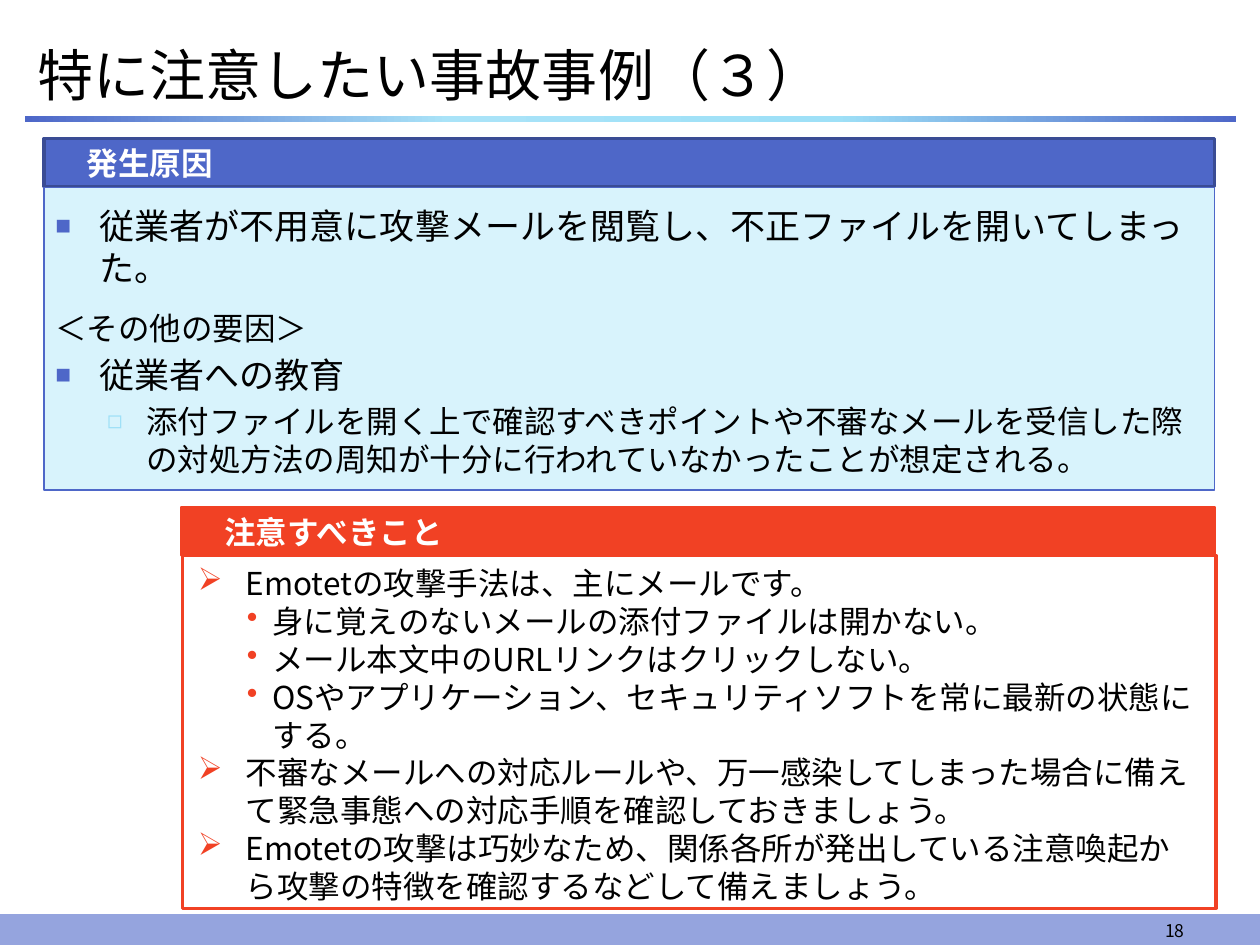
from dataclasses import dataclass

import pptx
import pptx.dml.color
import pptx.enum.shapes
import pptx.enum.text
import pptx.oxml
import pptx.oxml.ns
import pptx.util
from pptx.util import Inches

ALIGN = pptx.enum.text.PP_ALIGN
ANCHOR = pptx.enum.text.MSO_ANCHOR


@dataclass(frozen=True)
class Theme:
    font: str = "Noto Sans CJK JP"
    black: str = "000000"
    white: str = "FFFFFF"
    blue: str = "4E67C8"
    dark_blue: str = "3A4C94"
    footer_blue: str = "95A4DE"
    pale_blue: str = "D8F3FC"
    sky: str = "9EE0F7"
    light_sky: str = "A9E3F8"
    red: str = "F14124"
    title_size: int = 32
    lead_size: int = 20
    text_size: int = 18
    number_size: int = 10
    line_height: float = 1.2


THEME = Theme()

# Paragraph formats: text position and hanging bullet, in inches
CAUSE = dict(size=THEME.lead_size, indent=0.35, hanging=0.35, before=4,
             bullet="■", bullet_color=THEME.blue, bullet_percent=75)
CAUSE_DETAIL = dict(level=1, indent=0.72, hanging=0.31, before=3.6,
                    bullet="◻", bullet_color=THEME.sky, bullet_percent=80)
CAUSE_LABEL = dict(before=12)
ADVICE = dict(indent=0.38, hanging=0.38, bullet="➢", bullet_color=THEME.red)
ADVICE_DETAIL = dict(level=1, indent=0.59, hanging=0.2, bullet="•", bullet_color=THEME.red)

CAUSES = [
    ("従業者が不用意に攻撃メールを閲覧し、不正ファイルを開いてしまった。", CAUSE),
    ("＜その他の要因＞", CAUSE_LABEL),
    ("従業者への教育", CAUSE),
    ("添付ファイルを開く上で確認すべきポイントや不審なメールを受信した際の対処方法の周知が"
     "十分に行われていなかったことが想定される。", CAUSE_DETAIL),
]
ADVICES = [
    ("Emotetの攻撃手法は、主にメールです。", ADVICE),
    ("身に覚えのないメールの添付ファイルは開かない。", ADVICE_DETAIL),
    ("メール本文中のURLリンクはクリックしない。", ADVICE_DETAIL),
    ("OSやアプリケーション、セキュリティソフトを常に最新の状態にする。", ADVICE_DETAIL),
    ("不審なメールへの対応ルールや、万一感染してしまった場合に備えて"
     "緊急事態への対応手順を確認しておきましょう。", ADVICE),
    ("Emotetの攻撃は巧妙なため、関係各所が発出している注意喚起から"
     "攻撃の特徴を確認するなどして備えましょう。", ADVICE),
]


def rgb(color):
    return pptx.dml.color.RGBColor.from_string(color)


def add_child(parent, tag, **attributes):
    child = pptx.oxml.parse_xml(f"<a:{tag} {pptx.oxml.ns.nsdecls('a')}/>")
    for name, value in attributes.items():
        child.set(name, str(value))
    parent.append(child)
    return child


def set_bullet(paragraph, indent, hanging, bullet, color, percent):
    properties = paragraph._p.get_or_add_pPr()
    properties.set("marL", str(Inches(indent)))
    properties.set("indent", str(-Inches(hanging)))
    if not bullet:
        add_child(properties, "buNone")
        return
    add_child(add_child(properties, "buClr"), "srgbClr", val=color)
    add_child(properties, "buSzPct", val=percent * 1000)
    add_child(properties, "buChar", char=bullet)


def write(paragraph, text, size=THEME.text_size, color=THEME.black, bold=False,
          align=ALIGN.LEFT, level=0, before=0, indent=0, hanging=0,
          bullet=None, bullet_color=None, bullet_percent=100):
    paragraph.alignment = align
    paragraph.level = level
    paragraph.space_before = pptx.util.Pt(before)
    paragraph.space_after = pptx.util.Pt(0)
    paragraph.line_spacing = pptx.util.Pt(size * THEME.line_height)
    set_bullet(paragraph, indent, hanging, bullet, bullet_color, bullet_percent)
    run = paragraph.add_run()
    run.text = text
    run.font.size = pptx.util.Pt(size)
    run.font.bold = bold
    run.font.color.rgb = rgb(color)
    run.font.name = THEME.font
    add_child(run.font._element, "ea", typeface=THEME.font)


def write_list(frame, entries):
    for index, (text, style) in enumerate(entries):
        paragraph = frame.add_paragraph() if index else frame.paragraphs[0]
        write(paragraph, text, **style)


def set_frame(shape, anchor, margins=(0.1, 0.05, 0.1, 0.05)):
    frame = shape.text_frame
    frame.word_wrap = True
    frame.auto_size = pptx.enum.text.MSO_AUTO_SIZE.NONE
    frame.vertical_anchor = anchor
    (frame.margin_left, frame.margin_top,
     frame.margin_right, frame.margin_bottom) = map(Inches, margins)
    return frame


def place(shape, left, top, width, height):
    shape.left, shape.top = Inches(left), Inches(top)
    shape.width, shape.height = Inches(width), Inches(height)


def add_box(slide, box, fill=None, line=None, line_width=0.75):
    shape = slide.shapes.add_shape(
        pptx.enum.shapes.MSO_SHAPE.RECTANGLE, *map(Inches, box))
    shape.shadow.inherit = False
    if fill:
        shape.fill.solid()
        shape.fill.fore_color.rgb = rgb(fill)
    if line:
        shape.line.color.rgb = rgb(line)
        shape.line.width = pptx.util.Pt(line_width)
    else:
        shape.line.fill.background()
    return shape


def add_title_rule(slide):
    shape = add_box(slide, (0.2, 0.92, 9.61, 0.05))
    shape.fill.gradient()
    shape.fill.gradient_angle = 0
    stops = shape.element.spPr.find(".//" + pptx.oxml.ns.qn("a:gsLst"))
    for stop in list(stops):
        stops.remove(stop)
    for percent, color in ((0, THEME.blue), (35, THEME.light_sky),
                           (67, THEME.sky), (100, THEME.blue)):
        add_child(add_child(stops, "gs", pos=percent * 1000), "srgbClr", val=color)


def add_heading(slide, text, box, fill, line):
    shape = add_box(slide, box, fill, line, 2)
    frame = set_frame(shape, ANCHOR.MIDDLE, (0.34, 0.01, 0.08, 0.01))
    write(frame.paragraphs[0], text, color=THEME.white, bold=True)


def add_page_number(slide, number):
    shape = slide.shapes.add_textbox(*map(Inches, (7.17, 7.21, 2.33, 0.31)))
    frame = set_frame(shape, ANCHOR.BOTTOM)
    write(frame.paragraphs[0], number, size=THEME.number_size, align=ALIGN.RIGHT)


def main():
    presentation = pptx.Presentation()
    presentation.slide_width, presentation.slide_height = Inches(10), Inches(7.5)
    slide = presentation.slides.add_slide(presentation.slide_layouts[1])
    title, body = slide.shapes.title, slide.placeholders[1]

    add_box(slide, (0, 7.26, 10, 0.24), THEME.footer_blue, THEME.footer_blue)
    add_title_rule(slide)
    place(title, 0.2, 0.26, 9.61, 0.65)
    write(set_frame(title, ANCHOR.MIDDLE).paragraphs[0],
          "特に注意したい事故事例（３）", size=THEME.title_size)
    add_page_number(slide, "18")

    advice = add_box(slide, (1.45, 4.41, 8.2, 2.8), THEME.white, THEME.red, 2)
    write_list(set_frame(advice, ANCHOR.MIDDLE, (0.12, 0.04, 0.12, 0)), ADVICES)

    add_heading(slide, "発生原因", (0.35, 1.1, 9.29, 0.38), THEME.blue, THEME.dark_blue)
    panel = add_box(slide, (0.35, 1.49, 9.29, 2.4), THEME.pale_blue, THEME.blue)
    panel.element.addnext(body.element)
    place(body, 0.34, 1.57, 9.29, 2.25)
    write_list(set_frame(body, ANCHOR.TOP), CAUSES)

    add_heading(slide, "注意すべきこと", (1.44, 4.03, 8.2, 0.38), THEME.red, THEME.red)
    presentation.save("out.pptx")


if __name__ == "__main__":
    main()
